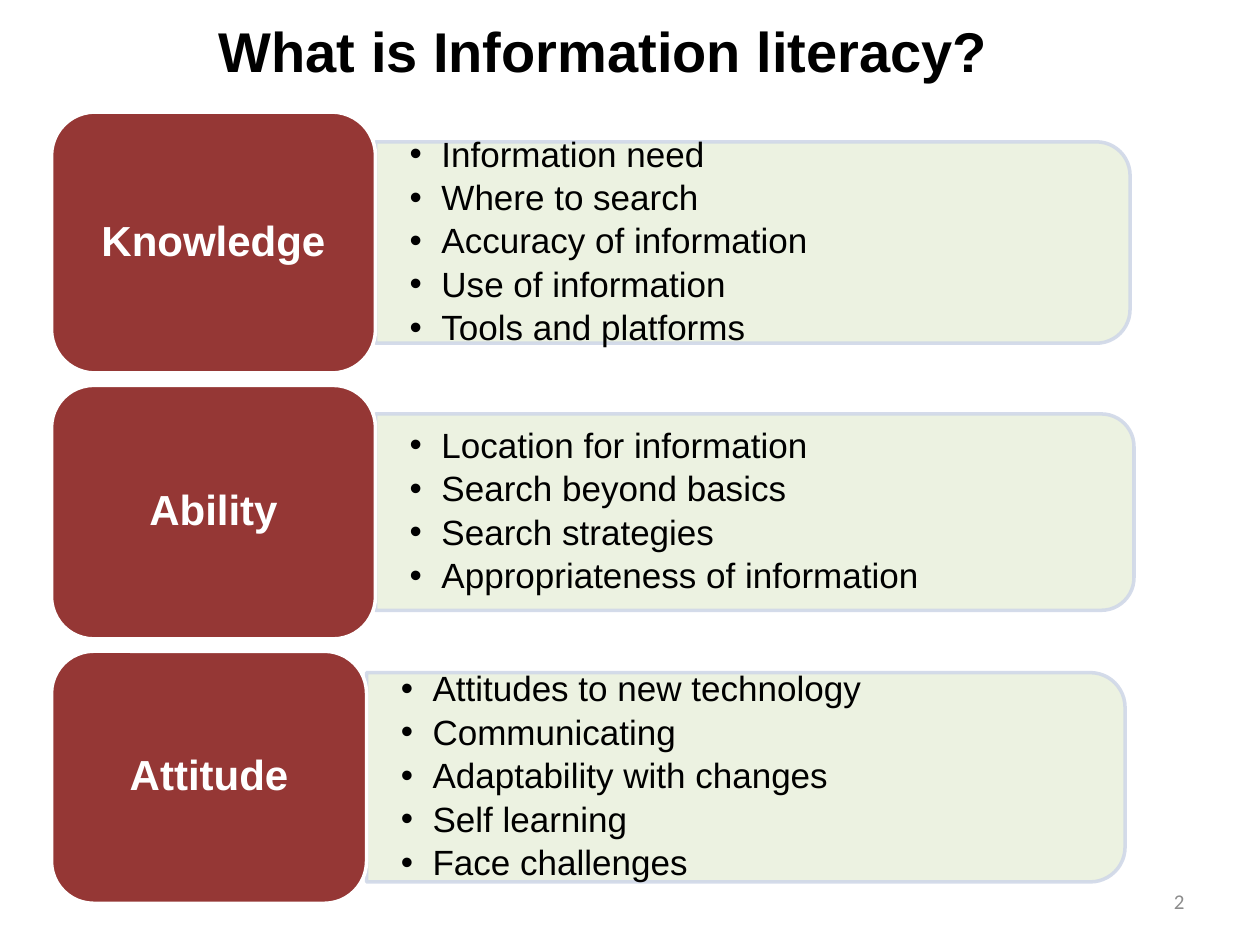
import dataclasses

import pptx
import pptx.dml.color
import pptx.enum.shapes
import pptx.enum.text
import pptx.oxml.ns
import pptx.util
from lxml import etree

Cm = pptx.util.Cm
Pt = pptx.util.Pt
Shape = pptx.enum.shapes.MSO_SHAPE
Align = pptx.enum.text.PP_ALIGN
Anchor = pptx.enum.text.MSO_ANCHOR
qn = pptx.oxml.ns.qn


@dataclasses.dataclass(frozen=True)
class Theme:
    font: str = "Arial"
    number_font: str = "Calibri"
    black: str = "000000"
    white: str = "FFFFFF"
    grey: str = "8C8C8C"
    card: str = "953735"
    panel: str = "EBF1DE"
    panel_line: str = "D0D8E8"
    title_size: int = 32
    label_size: int = 24
    bullet_size: int = 20
    number_size: int = 12


class SlideBuilder:
    def __init__(self, slide, theme):
        self.slide = slide
        self.theme = theme

    def format_paragraph(self, paragraph, size, color, bold=False, align=Align.LEFT, font=None):
        paragraph.alignment = align
        paragraph.font.name = font or self.theme.font
        paragraph.font.size = Pt(size)
        paragraph.font.bold = bold
        paragraph.font.color.rgb = pptx.dml.color.RGBColor.from_string(color)

    def title(self, text, left, top, width, height):
        shape = self.slide.shapes.title
        shape.left, shape.top, shape.width, shape.height = map(Cm, (left, top, width, height))
        frame = shape.text_frame
        frame.text = text
        frame.auto_size = pptx.enum.text.MSO_AUTO_SIZE.NONE
        frame.vertical_anchor = Anchor.TOP
        self.format_paragraph(frame.paragraphs[0], self.theme.title_size,
                              self.theme.black, True, Align.CENTER)

    def box(self, kind, left, top, width, height, fill, line):
        shape = self.slide.shapes.add_shape(kind, *map(Cm, (left, top, width, height)))
        shape.shadow.inherit = False
        shape.fill.solid()
        shape.fill.fore_color.rgb = pptx.dml.color.RGBColor.from_string(fill)
        shape.line.color.rgb = pptx.dml.color.RGBColor.from_string(line)
        shape.line.width = Pt(2)
        return shape

    def text_box(self, left, top, width, height):
        frame = self.slide.shapes.add_textbox(*map(Cm, (left, top, width, height))).text_frame
        frame.word_wrap = True
        frame.vertical_anchor = Anchor.MIDDLE
        return frame

    def panel(self, left, middle, length, depth):
        """Panel with rounded right corners: an upright shape turned a quarter."""
        shape = self.box(Shape.ROUND_2_SAME_RECTANGLE, left + (length - depth) / 2,
                         middle - length / 2, depth, length,
                         self.theme.panel, self.theme.panel_line)
        shape.rotation = 90
        for color in shape.element.spPr.iter(qn("a:srgbClr")):
            etree.SubElement(color, qn("a:alpha"), val="90000")

    def bullets(self, items, left, top, width, height):
        frame = self.text_box(left, top, width, height)
        frame.margin_left = frame.margin_right = Cm(0.69)
        frame.margin_top = frame.margin_bottom = Cm(0.36)
        frame.text = "\n".join(items)
        for paragraph in frame.paragraphs:
            self.format_paragraph(paragraph, self.theme.bullet_size, self.theme.black)
            paragraph.level = 1
            paragraph.line_spacing = 0.9
            paragraph.space_after = Pt(3.2)
            properties = paragraph._p.get_or_add_pPr()
            properties.set("marL", str(Cm(0.64)))
            properties.set("indent", str(-Cm(0.64)))
            run_defaults = properties.find(qn("a:defRPr"))
            run_defaults.addprevious(etree.Element(qn("a:buFont"), typeface=self.theme.font))
            run_defaults.addprevious(etree.Element(qn("a:buChar"), char="•"))

    def card(self, text, left, top, width, height):
        shape = self.box(Shape.ROUNDED_RECTANGLE, left, top, width, height,
                         self.theme.card, self.theme.white)
        frame = shape.text_frame
        frame.text = text
        frame.vertical_anchor = Anchor.MIDDLE
        paragraph = frame.paragraphs[0]
        self.format_paragraph(paragraph, self.theme.label_size, self.theme.white,
                              True, Align.CENTER)
        paragraph.line_spacing = 0.9

    def slide_number(self, text, left, top, width, height):
        frame = self.text_box(left, top, width, height)
        frame.text = text
        self.format_paragraph(frame.paragraphs[0], self.theme.number_size, self.theme.grey,
                              align=Align.RIGHT, font=self.theme.number_font)


# Label, card width and height, panel length and depth, bullet items
ROWS = [
    ("Knowledge", 6.53, 5.26, 15.21, 4.06,
     ["Information need", "Where to search", "Accuracy of information",
      "Use of information", "Tools and platforms"]),
    ("Ability", 6.53, 5.11, 15.29, 3.96,
     ["Location for information", "Search beyond basics", "Search strategies",
      "Appropriateness of information"]),
    ("Attitude", 6.35, 5.08, 15.29, 4.22,
     ["Attitudes to new technology", "Communicating", "Adaptability with changes",
      "Self learning", "Face challenges"]),
]
CARD_LEFT, FIRST_TOP, ROW_GAP = 1.04, 2.26, 0.25


def main():
    presentation = pptx.Presentation()
    presentation.slide_width, presentation.slide_height = Cm(25.4), Cm(19.05)
    slide = presentation.slides.add_slide(presentation.slide_layouts[5])
    builder = SlideBuilder(slide, Theme())

    # Heading and page number
    builder.title("What is Information literacy?", 1.47, 0.2, 21.39, 1.63)
    builder.slide_number("2", 18.21, 17.65, 5.92, 1.02)

    # Rows: each panel is centred on its card and starts at the card's right edge
    top = FIRST_TOP
    for label, width, height, length, depth, items in ROWS:
        middle = top + height / 2
        panel_left = CARD_LEFT + width
        builder.panel(panel_left, middle, length, depth)
        builder.bullets(items, panel_left, middle - depth / 2 + 0.2, length - 0.2, depth - 0.4)
        builder.card(label, CARD_LEFT, top, width, height)
        top += height + ROW_GAP

    presentation.save("out.pptx")


if __name__ == "__main__":
    main()
